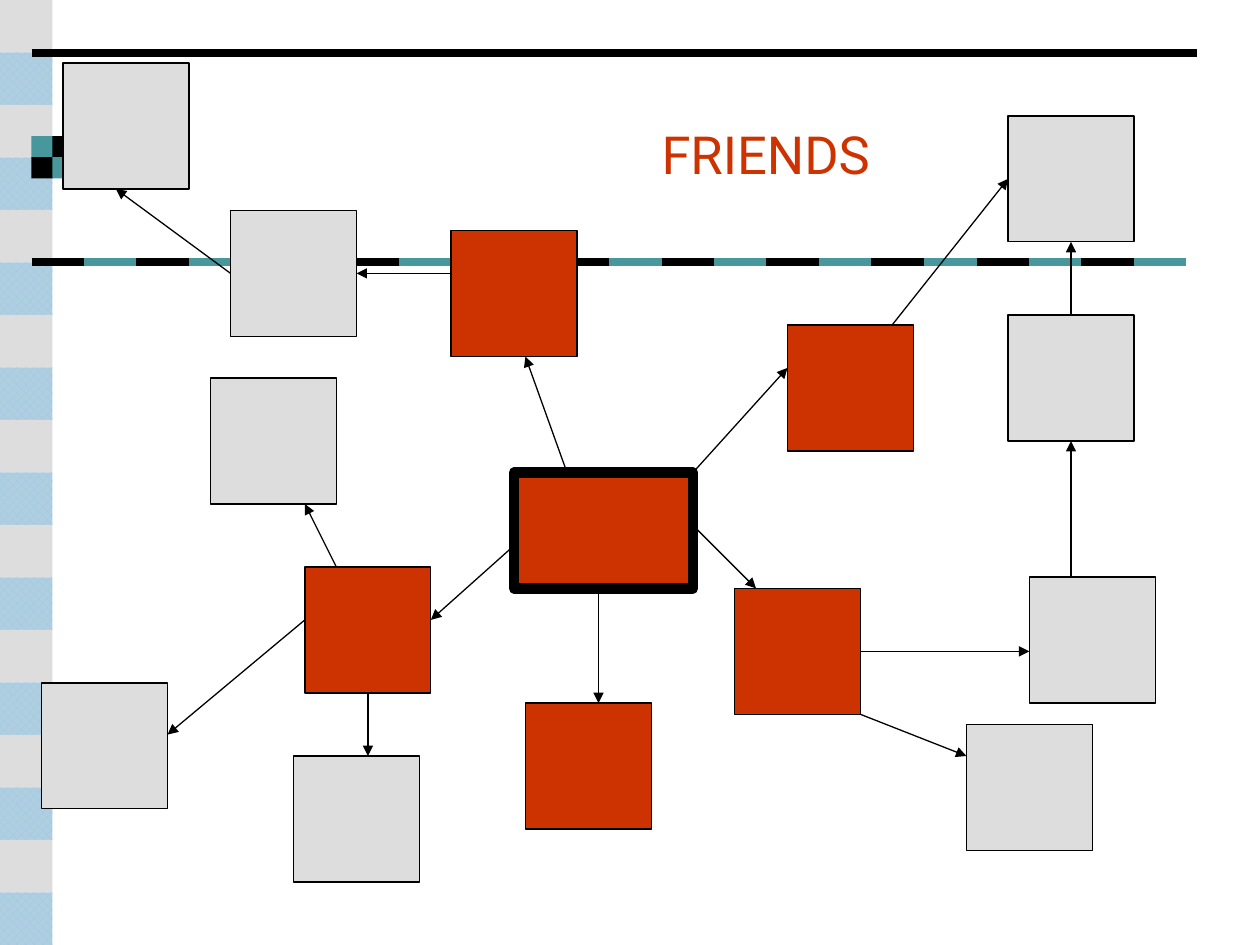
from lxml import etree
from pptx import Presentation
from pptx.dml.color import RGBColor
from pptx.enum.dml import MSO_PATTERN
from pptx.enum.shapes import MSO_CONNECTOR, MSO_SHAPE
from pptx.enum.text import MSO_ANCHOR, PP_ALIGN
from pptx.oxml.ns import qn
from pptx.util import Inches, Pt

RECTANGLE = MSO_SHAPE.RECTANGLE
STRAIGHT = MSO_CONNECTOR.STRAIGHT
HALF_TONE = MSO_PATTERN.PERCENT_50
TOP = MSO_ANCHOR.TOP
LEFT = PP_ALIGN.LEFT

BLACK = RGBColor(0x00, 0x00, 0x00)
RED = RGBColor(0xCC, 0x33, 0x00)
GRAY = RGBColor(0xDD, 0xDD, 0xDD)
TEAL = RGBColor(0x47, 0x97, 0x9D)
PALE_TEAL = RGBColor(0x9D, 0xCD, 0xCD)
PALE_BLUE = RGBColor(0xAF, 0xCD, 0xE3)

presentation = Presentation()
presentation.slide_width = Inches(10)
presentation.slide_height = Inches(7.5)
slide = presentation.slides.add_slide(presentation.slide_layouts[5])


def add_box(left, top, width, height, color, line_width=None):
    shape = slide.shapes.add_shape(
        RECTANGLE, Inches(left), Inches(top), Inches(width), Inches(height))
    shape.shadow.inherit = False
    shape.fill.solid()
    shape.fill.fore_color.rgb = color
    if line_width is None:
        shape.line.fill.background()
    else:
        shape.line.color.rgb = BLACK
        shape.line.width = Pt(line_width)
    return shape


def add_line(start, end, color=BLACK, width=0.75, arrow=False):
    connector = slide.shapes.add_connector(
        STRAIGHT, Inches(start[0]), Inches(start[1]), Inches(end[0]), Inches(end[1]))
    connector.line.color.rgb = color
    connector.line.width = Pt(width)
    if arrow:
        etree.SubElement(connector.line._get_or_add_ln(), qn("a:tailEnd"), type="triangle")
    etree.SubElement(connector._element.spPr, qn("a:effectLst"))


title = slide.shapes.title
title.left, title.top = Inches(5.15), Inches(0.92)
title.width, title.height = Inches(1.86), Inches(0.6)
title.text_frame.text = "FRIENDS"
title.text_frame.vertical_anchor = TOP
title.text_frame.word_wrap = True
paragraph = title.text_frame.paragraphs[0]
paragraph.alignment = LEFT
paragraph.font.name = "Roboto"
paragraph.font.size = Pt(30)
paragraph.font.color.rgb = RED

band_count = 18
band = 7.5 / band_count
for index in range(band_count):
    tile = add_box(0, index * band, band, band, GRAY)
    if index % 2:
        tile.fill.patterned()
        tile.fill.pattern = HALF_TONE
        tile.fill.fore_color.rgb = PALE_TEAL
        tile.fill.back_color.rgb = PALE_BLUE

add_line((0.25, 0.42), (9.5, 0.42), width=4.5)

for row in range(2):
    for column in range(2):
        add_box(0.25 + column / 6, 1.08 + row / 6, 0.17, 0.17,
                TEAL if row == column else BLACK)

covered_dashes = (4, 5, 9)
for index in range(22):
    if index not in covered_dashes:
        left = 0.25 + index * band
        add_line((left, 2.08), (left + band, 2.08), TEAL if index % 2 else BLACK, 4.5)

add_box(4.08, 3.75, 1.42, 0.92, RED, 6)

friends = [(2.42, 4.5), (5.83, 4.67), (4.17, 5.58), (6.25, 2.58), (3.58, 1.83)]
friends_of_friends = [
    (1.67, 3), (0.33, 5.42), (8.17, 4.58), (8, 2.5), (8, 0.92),
    (1.83, 1.67), (0.5, 0.5), (7.67, 5.75), (2.33, 6),
]
for color, positions in ((RED, friends), (GRAY, friends_of_friends)):
    for left, top in positions:
        add_box(left, top, 1, 1, color, 0.75)

arrows = [
    ((4.75, 4.67), (4.75, 5.58)),
    ((5.5, 3.75), (6.25, 2.92)),
    ((4.5, 3.75), (4.17, 2.83)),
    ((4.08, 4.33), (3.42, 4.92)),
    ((5.5, 4.17), (6, 4.67)),
    ((3.58, 2.17), (2.83, 2.17)),
    ((1.83, 2.17), (0.92, 1.5)),
    ((6.83, 5.17), (8.17, 5.17)),
    ((6.83, 5.67), (7.67, 6)),
    ((8.5, 4.58), (8.5, 3.5)),
    ((8.5, 2.5), (8.5, 1.92)),
    ((7.08, 2.58), (8, 1.42)),
    ((2.42, 4.92), (1.33, 5.83)),
    ((2.67, 4.5), (2.42, 4)),
    ((2.92, 5.5), (2.92, 6)),
]
for start, end in arrows:
    add_line(start, end, arrow=True)

presentation.save("out.pptx")
